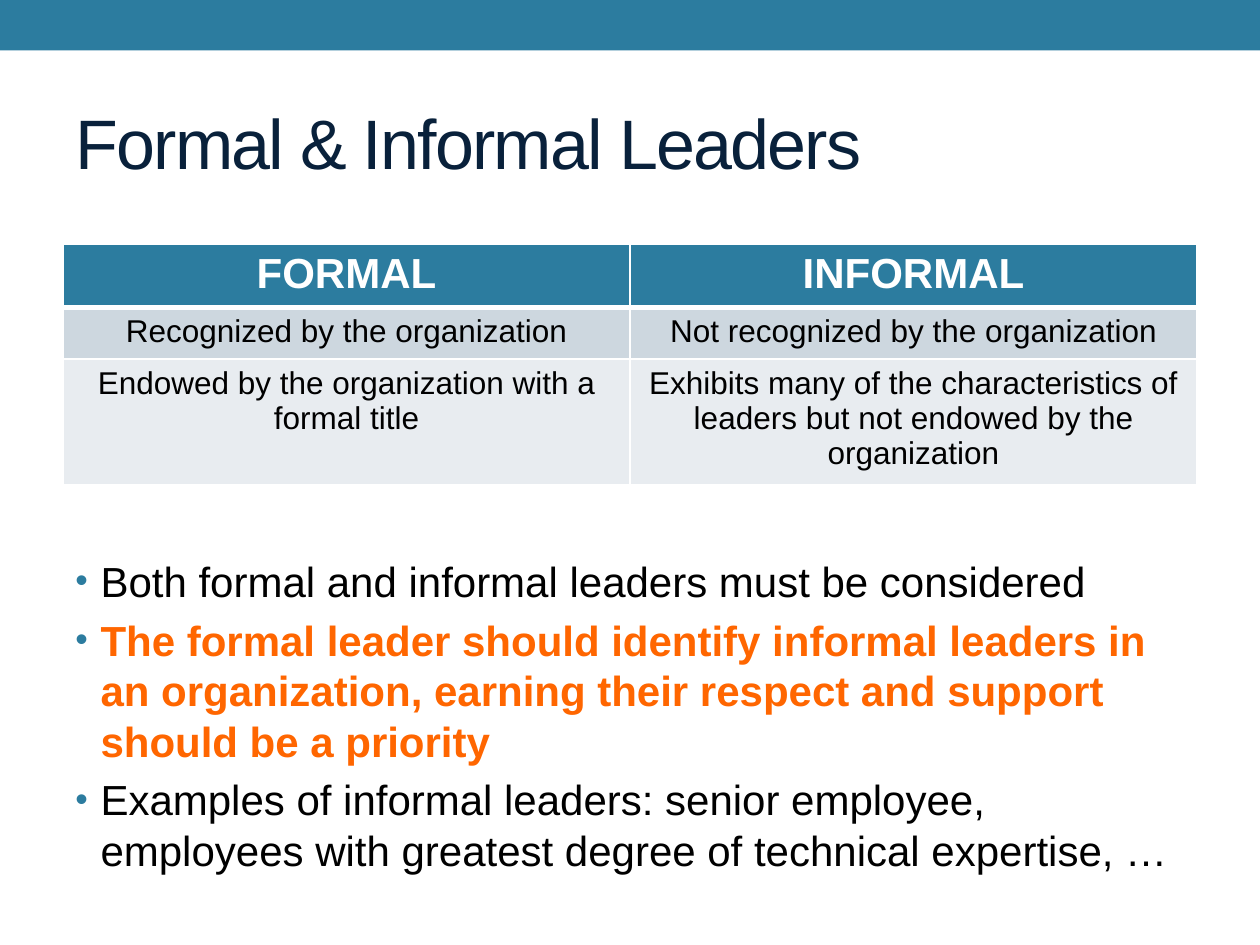
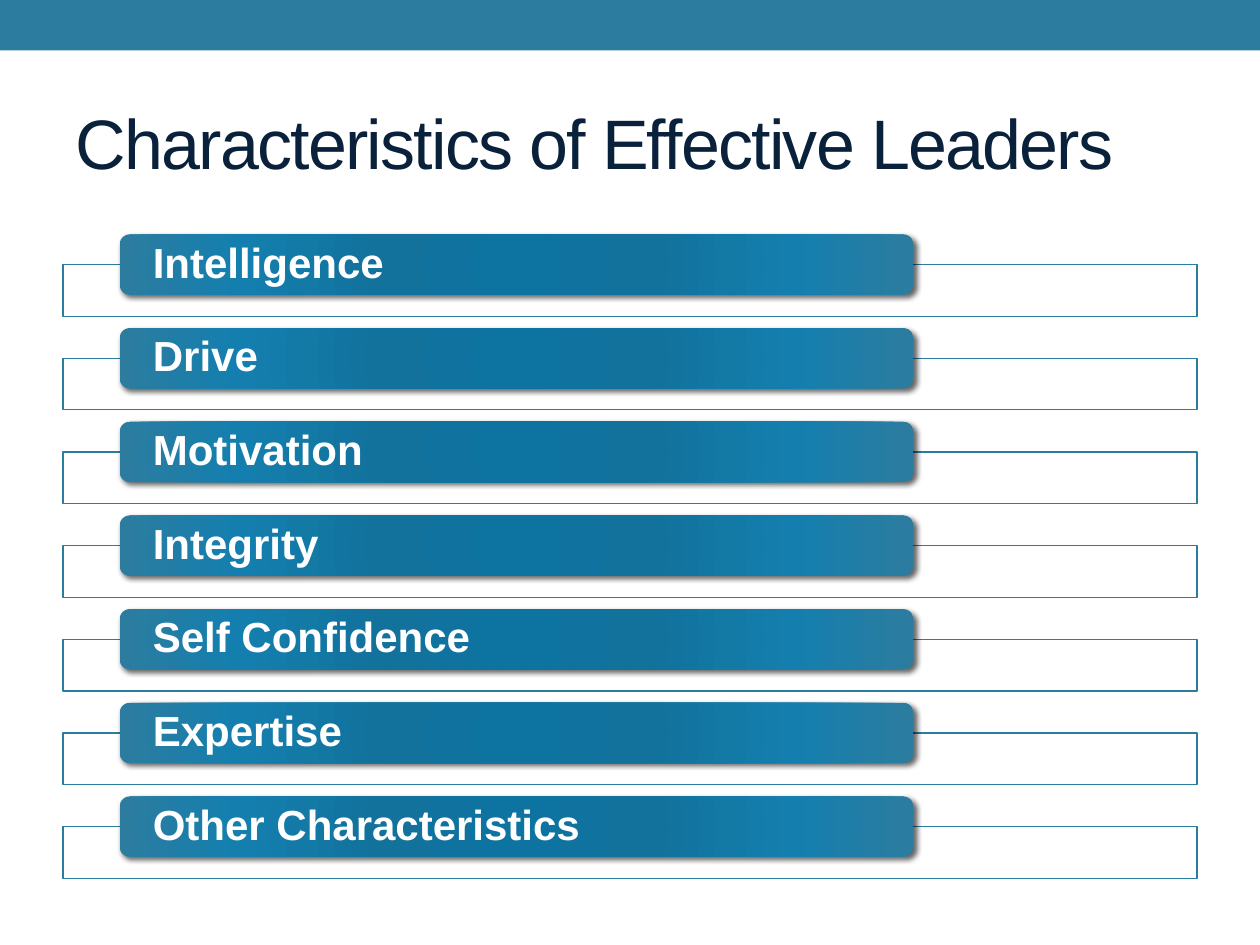
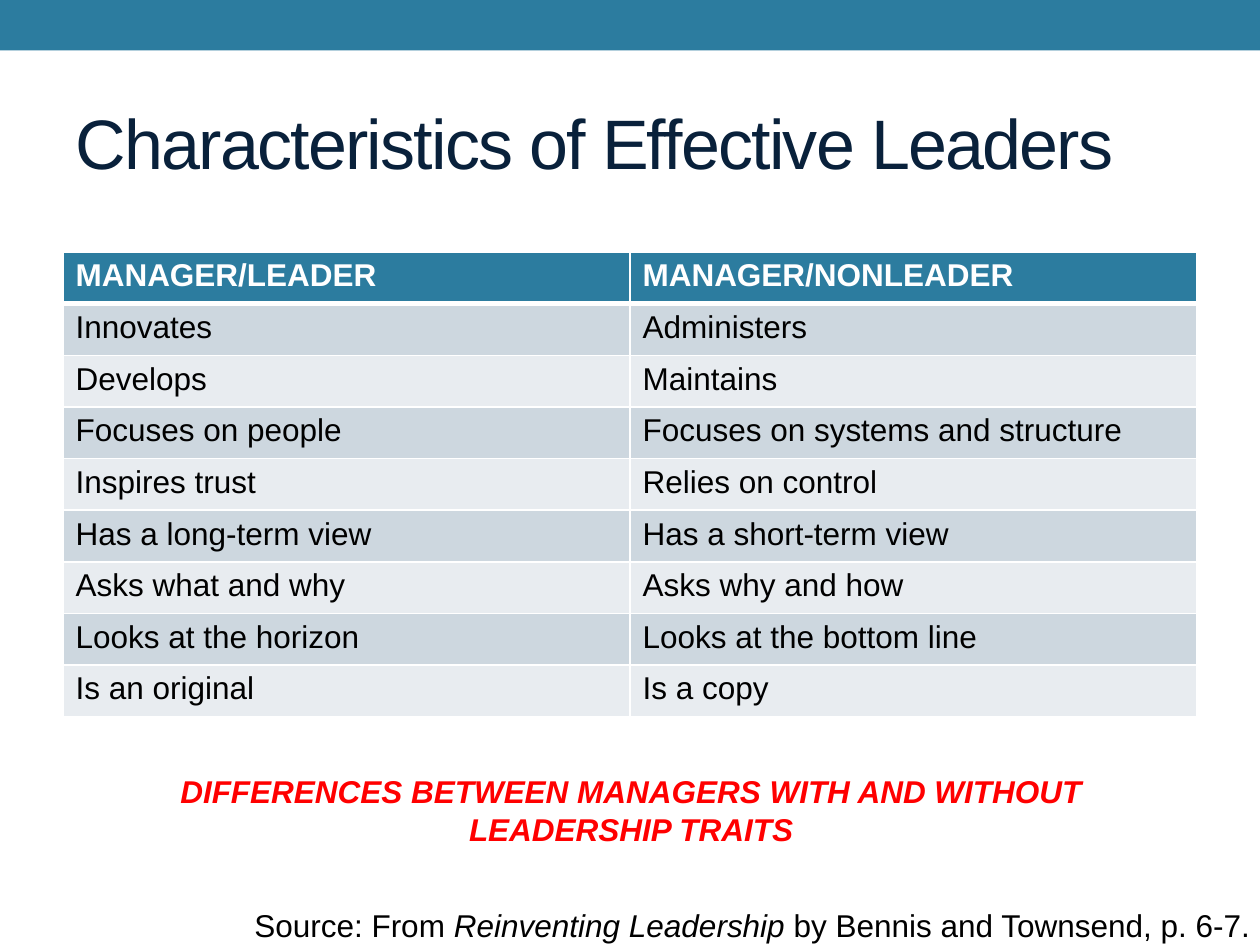
from lxml.etree import SubElement
from pptx import Presentation
from pptx.dml.color import RGBColor
from pptx.enum.shapes import MSO_SHAPE
from pptx.enum.text import MSO_ANCHOR, PP_ALIGN
from pptx.oxml.ns import qn
from pptx.util import Inches, Pt

# Content
FORMAL = [
    ("FORMAL", "INFORMAL"),
    ("Recognized by the organization", "Not recognized by the organization"),
    ("Endowed by the organization with a formal title",
     "Exhibits many of the characteristics of leaders but not endowed by the organization"),
]
POINTS = [
    ("Both formal and informal leaders must be considered", {}),
    ("The formal leader should identify informal leaders in an organization, "
     "earning their respect and support should be a priority",
     {"color": "orange", "bold": True}),
    ("Examples of informal leaders: senior employee, employees with greatest "
     "degree of technical expertise, …", {}),
]
TRAITS = ["Intelligence", "Drive", "Motivation", "Integrity",
          "Self Confidence", "Expertise", "Other Characteristics"]
MANAGERS = [
    ("MANAGER/LEADER", "MANAGER/NONLEADER"),
    ("Innovates", "Administers"),
    ("Develops", "Maintains"),
    ("Focuses on people", "Focuses on systems and structure"),
    ("Inspires trust", "Relies on control"),
    ("Has a long-term view", "Has a short-term view"),
    ("Asks what and why", "Asks why and how"),
    ("Looks at the horizon", "Looks at the bottom line"),
    ("Is an original", "Is a copy"),
]
CAPTION = "DIFFERENCES BETWEEN MANAGERS WITH AND WITHOUT LEADERSHIP TRAITS"
SOURCE = [("Source: From ", {}),
          ("Reinventing Leadership ", {"italic": True}),
          ("by Bennis and Townsend, p. 6-7.", {})]

# Shared style
FONT = "Arial"
COLORS = {"teal": "2C7C9F", "navy": "09213B", "black": "000000",
          "white": "FFFFFF", "orange": "FF6600", "red": "FF0000",
          "dark": "CDD7DF", "light": "E8ECF0"}
GLOW = [(0, "0D74A1"), (34, "12729C"), (70, "147FAE"), (100, "2C7C9F")]
LEFT, WIDTH = 0.5, 9
ROW = 0.41
STEP = 0.7435  # distance from one trait to the next


def rgb(name):
    return RGBColor.from_string(COLORS[name])


def node(parent, tag, **attrs):
    return SubElement(parent, qn("a:" + tag), {k: str(v) for k, v in attrs.items()})


def write(para, text, size=18, color="black", bold=False, italic=False,
          align=None, track=0):
    run = para.add_run()
    run.text = text
    font = run.font
    font.name, font.size = FONT, Pt(size)
    font.bold, font.italic = bold, italic
    font.color.rgb = rgb(color)
    if track:
        run._r.get_or_add_rPr().set("spc", str(track * 100))
    if align:
        para.alignment = align


def add_box(slide, left, top, width, height, wrap=True):
    box = slide.shapes.add_textbox(*map(Inches, (left, top, width, height)))
    box.text_frame.word_wrap = wrap
    return box.text_frame


def add_block(slide, kind, left, top, width, height):
    block = slide.shapes.add_shape(kind, *map(Inches, (left, top, width, height)))
    block.shadow.inherit = False
    block.line.fill.background()
    return block


def add_page(deck, title):
    slide = deck.slides.add_slide(deck.slide_layouts[6])
    band = add_block(slide, MSO_SHAPE.RECTANGLE, 0, 0, 10, 0.4)
    band.fill.solid()
    band.fill.fore_color.rgb = rgb("teal")
    frame = add_box(slide, LEFT, 0.58, WIDTH, 1.08)
    frame.vertical_anchor = MSO_ANCHOR.MIDDLE
    write(frame.paragraphs[0], title, size=40, color="navy", track=-1)
    return slide


def add_edges(cell, top, bottom):
    props = cell._tc.get_or_add_tcPr()
    for side, width in (("L", 1), ("R", 1), ("T", top), ("B", bottom)):
        edge = node(props, "ln" + side, w=Pt(width))
        node(node(edge, "solidFill"), "srgbClr", val=COLORS["white"])


def add_grid(slide, rows, top, head=18, align=None):
    grid = slide.shapes.add_table(
        len(rows), 2, Inches(LEFT), Inches(top), Inches(WIDTH),
        Inches(ROW * len(rows))).table
    for r, row in enumerate(rows):
        fill = "teal" if r == 0 else "dark" if r % 2 else "light"
        for c, text in enumerate(row):
            cell = grid.cell(r, c)
            add_edges(cell, 3 if r == 1 else 1, 3 if r == 0 else 1)
            cell.fill.solid()
            cell.fill.fore_color.rgb = rgb(fill)
            write(cell.text_frame.paragraphs[0], text, align=align,
                  size=18 if r else head, bold=r == 0,
                  color="black" if r else "white")


def add_points(frame, points):
    for i, (text, style) in enumerate(points):
        para = frame.add_paragraph() if i else frame.paragraphs[0]
        para.space_before = Pt(4.8)
        props = para._p.get_or_add_pPr()
        props.set("marL", str(Inches(0.2)))
        props.set("indent", str(Inches(-0.2)))
        node(node(props, "buClr"), "srgbClr", val=COLORS["teal"])
        node(props, "buSzPct", val=85000)
        node(props, "buFont", typeface=FONT)
        node(props, "buChar", char="•")
        write(para, text, size=24, **style)


def add_glow(block):
    """Radial fill and a soft shadow to the lower right."""
    block.fill.gradient()
    grad = block._element.spPr.find(qn("a:gradFill"))
    for child in list(grad):
        grad.remove(child)
    stops = node(grad, "gsLst")
    for pos, color in GLOW:
        node(node(stops, "gs", pos=pos * 1000), "srgbClr", val=color)
    node(node(grad, "path", path="circle"), "fillToRect",
         l=100000, t=100000, r=100000, b=100000)
    effects = block._element.spPr.find(qn("a:effectLst"))
    shade = node(effects, "outerShdw", blurRad=Pt(3), dist=Pt(2),
                 dir=45 * 60000, rotWithShape=0)
    node(node(shade, "srgbClr", val=COLORS["black"]), "alpha", val=60000)


def add_trait(slide, text, top):
    frame = add_block(slide, MSO_SHAPE.RECTANGLE, LEFT, top + 0.24, WIDTH, ROW)
    frame.fill.solid()
    frame.fill.fore_color.rgb = rgb("white")
    color = frame._element.spPr.find(qn("a:solidFill"))[0]
    node(color, "alpha", val=90000)
    frame.line.color.rgb = rgb("teal")
    frame.line.width = Pt(0.75)
    bar = add_block(slide, MSO_SHAPE.ROUNDED_RECTANGLE, 0.95, top, 6.3, 0.48)
    add_glow(bar)
    label = bar.text_frame
    label.word_wrap = True
    label.vertical_anchor = MSO_ANCHOR.MIDDLE
    label.margin_left = label.margin_right = Inches(0.24)
    label.margin_top = label.margin_bottom = 0
    para = label.paragraphs[0]
    para.line_spacing = 0.9
    write(para, text, size=24, color="white", bold=True, align=PP_ALIGN.LEFT)


def main():
    deck = Presentation()
    deck.slide_width, deck.slide_height = Inches(10), Inches(7.5)

    # Formal and informal leaders
    slide = add_page(deck, "Formal & Informal Leaders")
    add_points(add_box(slide, LEFT, 4.36, WIDTH, 3.14), POINTS)
    add_grid(slide, FORMAL, 1.94, head=24, align=PP_ALIGN.CENTER)

    # Traits
    slide = add_page(deck, "Characteristics of Effective Leaders")
    for i, trait in enumerate(TRAITS):
        add_trait(slide, trait, 1.86 + i * STEP)

    # Managers compared
    slide = add_page(deck, "Characteristics of Effective Leaders")
    add_grid(slide, MANAGERS, 2)
    caption = add_box(slide, 0.56, 6.08, 8.9, 0.71)
    write(caption.paragraphs[0], CAPTION, color="red", bold=True, italic=True,
          align=PP_ALIGN.CENTER)
    source = add_box(slide, 1.92, 7.14, 8.18, 0.4, wrap=False)
    for text, style in SOURCE:
        write(source.paragraphs[0], text, **style)

    deck.save("out.pptx")


if __name__ == "__main__":
    main()
